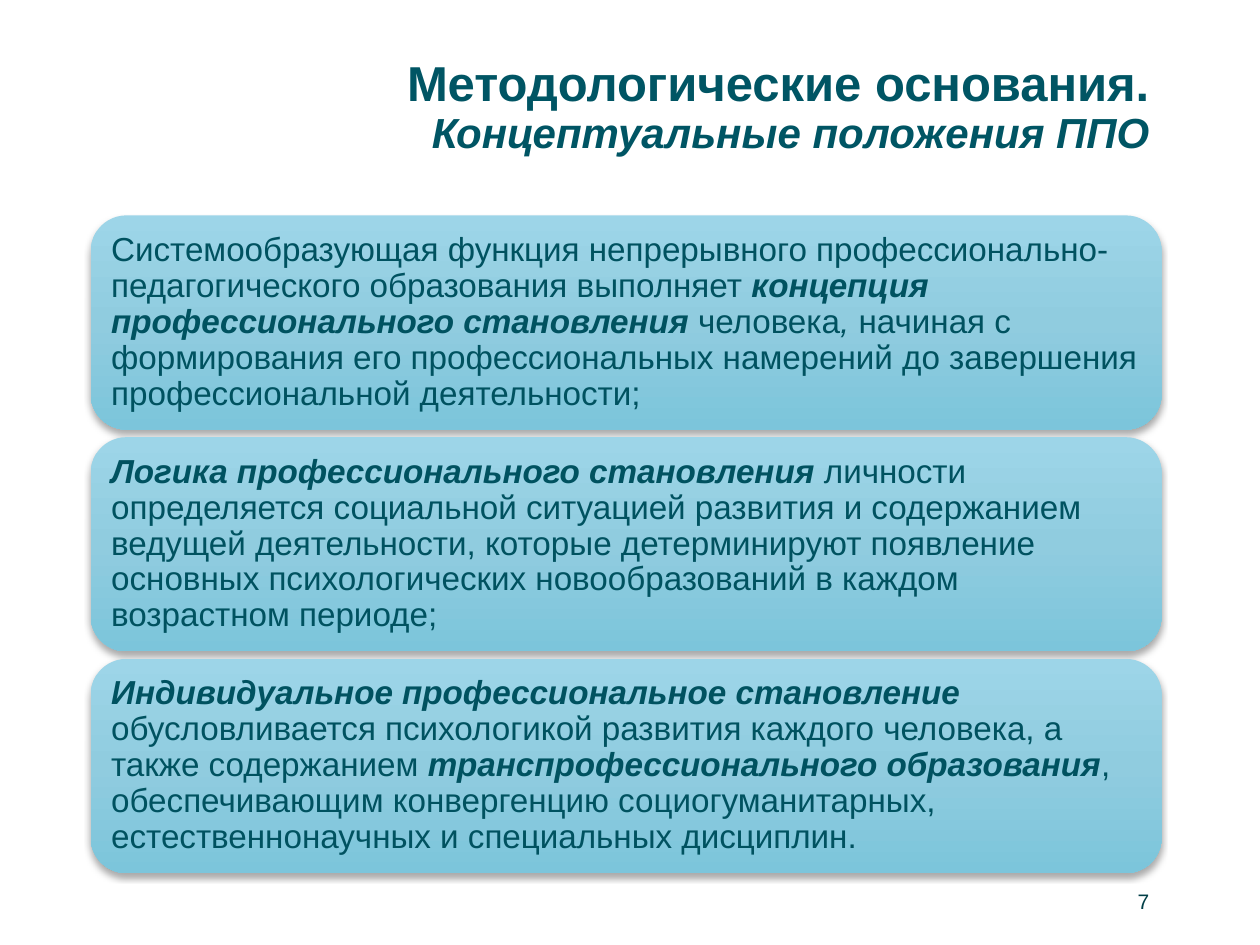
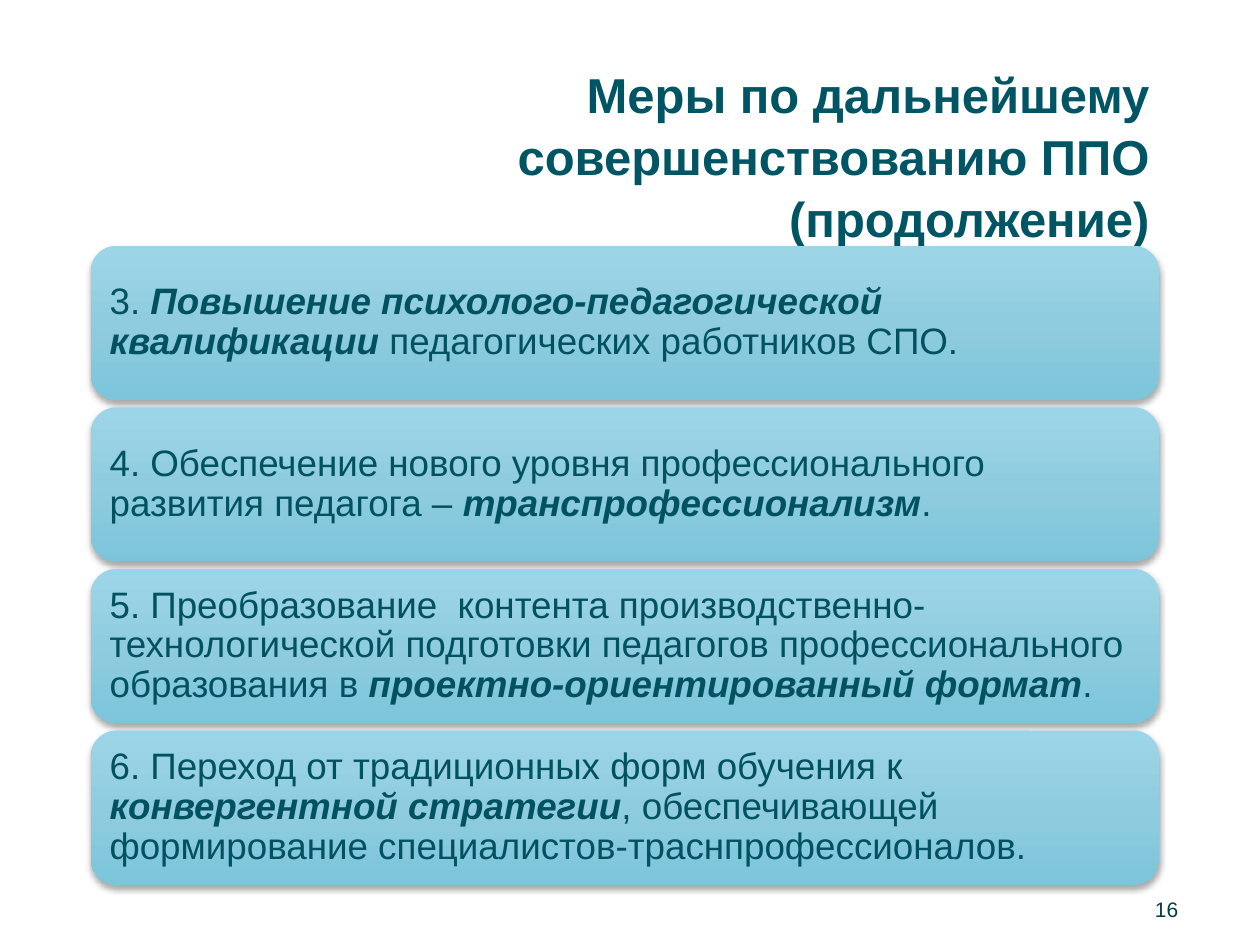
"""Build two slides of stacked statement cards about vocational teacher education."""
from pptx import Presentation
from pptx.dml.color import RGBColor as RGB
from pptx.enum.shapes import MSO_SHAPE as SHAPE
from pptx.enum.text import MSO_ANCHOR as ANCHOR, PP_ALIGN as ALIGN
from pptx.oxml import parse_xml
from pptx.oxml.ns import nsdecls
from pptx.util import Inches, Pt

COLORS = {"title": "005564", "text": "005260", "number": "023F47", "shadow": "000000",
          "top": "9DD5E8", "middle": "90CCDF", "bottom": "7CC5DB"}
FONT = "Arial"

prs = Presentation()
prs.slide_width, prs.slide_height = Inches(10), Inches(7.5)
COL, ROW = prs.slide_width / 100, prs.slide_height / 75
CARD_LEFT, CARD_GAP = 7.2, 0.6

STOPS = "".join(f'<a:gs pos="{pos}"><a:srgbClr val="{COLORS[name]}"/></a:gs>'
                for pos, name in ((0, "top"), (50000, "middle"), (100000, "bottom")))
GRADIENT = (f'<a:gradFill {nsdecls("a")} rotWithShape="1"><a:gsLst>{STOPS}</a:gsLst>'
            '<a:lin ang="5400000" scaled="0"/></a:gradFill>')
SHADOW = (f'<a:effectLst {nsdecls("a")}><a:outerShdw blurRad="{Pt(3.5)}" dist="{Pt(2.2)}" '
          f'dir="5400000" rotWithShape="0"><a:srgbClr val="{COLORS["shadow"]}">'
          '<a:alpha val="32000"/></a:srgbClr></a:outerShdw></a:effectLst>')

SLIDES = [
    {"number": "7", "number_box": (88.7, 69.5, 3.5, 4),
     "title_box": (24.9, 4.2, 67.3, 13.2), "title_spacing": 0.9,
     "title": [("Методологические основания.", 28, "b"),
               ("Концептуальные положения ППО", 24, "bi")],
     "top": 17.1, "bottom": 69.3, "width": 85, "size": 19, "inset": 0.8,
     "cards": [
         [("Системообразующая функция непрерывного профессионально-педагогического "
           "образования выполняет ", ""),
          ("концепция профессионального становления ", "bi"),
          ("человека", ""), (",", "i"),
          (" начиная с формирования его профессиональных намерений до завершения "
           "профессиональной деятельности;", "")],
         [("Логика профессионального становления ", "bi"),
          ("личности определяется социальной ситуацией развития и содержанием ведущей "
           "деятельности, которые детерминируют появление основных психологических "
           "новообразований в каждом возрастном периоде;", "")],
         [("Индивидуальное профессиональное становление ", "bi"),
          ("обусловливается психологикой развития каждого человека, а также содержанием ", ""),
          ("транспрофессионального образования", "bi"),
          (", обеспечивающим конвергенцию социогуманитарных, естественнонаучных "
           "и специальных дисциплин.", "")]]},
    {"number": "16", "number_box": (87.6, 70, 6.9, 4.3),
     "title_box": (19, 4.4, 73.2, 13.2), "title_spacing": 1.05,
     "title": [("Меры по дальнейшему совершенствованию ППО (продолжение)", 28, "b")],
     "top": 19.5, "bottom": 70.2, "width": 84.8, "size": 21, "inset": 0.9,
     "cards": [
         [("3. ", ""), ("Повышение психолого-педагогической квалификации ", "bi"),
          ("педагогических работников СПО.", "")],
         [("4. Обеспечение нового уровня профессионального развития педагога – ", ""),
          ("транспрофессионализм", "bi"), (".", "")],
         [("5. Преобразование  контента производственно-технологической подготовки "
           "педагогов профессионального образования в ", ""),
          ("проектно-ориентированный формат", "bi"), (".", "")],
         [("6. Переход от традиционных форм обучения к ", ""),
          ("конвергентной стратегии", "bi"),
          (", обеспечивающей формирование специалистов-траснпрофессионалов.", "")]]},
]


def place(x, y, w, h):
    return round(x * COL), round(y * ROW), round(w * COL), round(h * ROW)


def add_run(p, text, size, color, style=""):
    r = p.add_run()
    r.text = text
    r.font.name, r.font.size = FONT, Pt(size)
    r.font.bold, r.font.italic = "b" in style, "i" in style
    r.font.color.rgb = RGB.from_string(COLORS[color])


for data in SLIDES:
    s = prs.slides.add_slide(prs.slide_layouts[6])

    tf = s.shapes.add_textbox(*place(*data["number_box"])).text_frame
    tf.word_wrap = True
    tf.vertical_anchor = ANCHOR.MIDDLE
    p = tf.paragraphs[0]
    p.alignment = ALIGN.RIGHT
    add_run(p, data["number"], 12, "number")

    tf = s.shapes.add_textbox(*place(*data["title_box"])).text_frame
    tf.word_wrap = True
    p = tf.paragraphs[0]
    p.alignment = ALIGN.RIGHT
    p.line_spacing = data["title_spacing"]
    for i, (text, size, style) in enumerate(data["title"]):
        if i:
            p.add_line_break()
        add_run(p, text, size, "title", style)

    pitch = (data["bottom"] - data["top"] + CARD_GAP) / len(data["cards"])
    for i, runs in enumerate(data["cards"]):
        box = place(CARD_LEFT, data["top"] + i * pitch, data["width"], pitch - CARD_GAP)
        sp = s.shapes.add_shape(SHAPE.ROUNDED_RECTANGLE, *box)
        sp.line.fill.background()
        spPr = sp._element.spPr
        spPr.prstGeom.addnext(parse_xml(GRADIENT))
        spPr.append(parse_xml(SHADOW))
        tf = sp.text_frame
        tf.word_wrap = True
        tf.vertical_anchor = ANCHOR.MIDDLE
        tf.margin_left = tf.margin_right = round(data["inset"] * COL)
        tf.margin_top = tf.margin_bottom = round(data["inset"] * ROW)
        p = tf.paragraphs[0]
        p.alignment = ALIGN.LEFT
        p.line_spacing = 0.9
        for text, style in runs:
            add_run(p, text, data["size"], "text", style)

prs.save("out.pptx")
